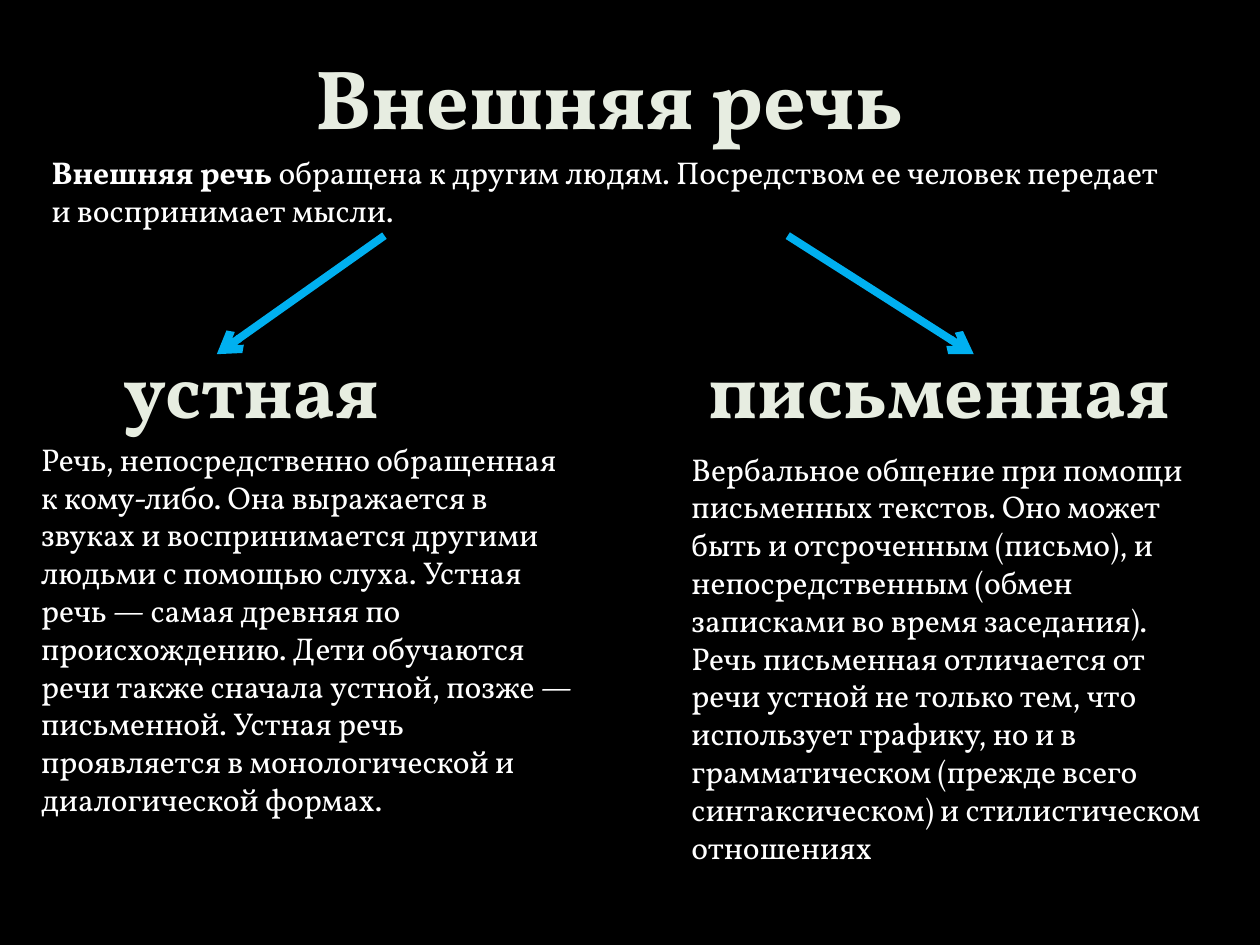
import pptx
import pptx.util
import pptx.dml.color
import pptx.enum.shapes
import pptx.enum.text
import pptx.oxml.ns
import lxml.etree

Cm = pptx.util.Cm
ALIGN = pptx.enum.text.PP_ALIGN

THEME = {
    "font": "Vollkorn",
    "background": "000000",
    "heading": "E7EDE1",
    "body": "FFFFFF",
    "arrow": "00B0F0",
    "title_size": 48,
    "heading_size": 44,
    "body_size": 18,
    "arrow_width": 4.5,
}

TITLE = ("Внешняя речь", (3.96, 0.79, 16.66, 2.31))
INTRO = (
    [
        ("Внешняя речь ", True),
        ("обращена к другим людям. Посредством ее человек передает "
         "и воспринимает мысли.", False),
    ],
    (0.79, 2.97, 23.22, 1.8),
)
HEADING_TOP, HEADING_HEIGHT = 6.76, 2.13
BODY_HEIGHT = 9.5
ARROW_TOP, ARROW_BOTTOM = 4.75, 7.14

BRANCHES = [
    {
        "heading": "устная",
        "heading_span": (-0.99, 12.12),
        "arrow_x": (7.75, 4.37),
        "body": "Речь, непосредственно обращенная к кому-либо. Она выражается "
                "в звуках и воспринимается другими людьми с помощью слуха. "
                "Устная речь — самая древняя по происхождению. Дети обучаются "
                "речи также сначала устной, позже — письменной. Устная речь "
                "проявляется в монологической и диалогической формах.",
        "body_place": (0.58, 8.74, 11.3),
    },
    {
        "heading": "письменная",
        "heading_span": (13.11, 11.66),
        "arrow_x": (15.88, 19.63),
        "body": "Вербальное общение при помощи письменных текстов. Оно может "
                "быть и отсроченным (письмо), и непосредственным (обмен "
                "записками во время заседания). Речь письменная отличается от "
                "речи устной не только тем, что использует графику, но и в "
                "грамматическом (прежде всего синтаксическом) и "
                "стилистическом отношениях",
        "body_place": (13.69, 8.94, 11.13),
    },
]


def rgb(name):
    return pptx.dml.color.RGBColor.from_string(THEME[name])


def apply(obj, values):
    for name, value in values.items():
        setattr(obj, name, value)


def write(sp, box, runs, size, color, align=ALIGN.LEFT):
    apply(sp, dict(zip(("left", "top", "width", "height"), map(Cm, box))))
    tf = sp.text_frame
    apply(tf, {
        "word_wrap": True,
        "auto_size": pptx.enum.text.MSO_AUTO_SIZE.SHAPE_TO_FIT_TEXT,
        "vertical_anchor": pptx.enum.text.MSO_ANCHOR.TOP,
    })
    p = tf.paragraphs[0]
    p.alignment = align
    for text, bold in runs:
        r = p.add_run()
        r.text = text
        apply(r.font, {
            "name": THEME["font"],
            "size": pptx.util.Pt(THEME[size]),
            "bold": bold,
        })
        r.font.color.rgb = rgb(color)


def add_text(slide, box, *args):
    write(slide.shapes.add_textbox(0, 0, 0, 0), box, *args)


def add_arrow(slide, x1, x2):
    line = slide.shapes.add_connector(
        pptx.enum.shapes.MSO_CONNECTOR.STRAIGHT,
        Cm(x1), Cm(ARROW_TOP), Cm(x2), Cm(ARROW_BOTTOM))
    line.line.color.rgb = rgb("arrow")
    line.line.width = pptx.util.Pt(THEME["arrow_width"])
    qn = pptx.oxml.ns.qn
    lxml.etree.SubElement(line.line._get_or_add_ln(), qn("a:tailEnd"), type="arrow")
    lxml.etree.SubElement(line._element.spPr, qn("a:effectLst"))


def main():
    prs = pptx.Presentation()
    apply(prs, {"slide_width": Cm(25.4), "slide_height": Cm(19.05)})
    slide = prs.slides.add_slide(prs.slide_layouts.get_by_name("Title Only"))
    fill = slide.background.fill
    fill.solid()
    fill.fore_color.rgb = rgb("background")

    title, title_box = TITLE
    write(slide.shapes.title, title_box, [(title, True)],
          "title_size", "heading", ALIGN.CENTER)
    runs, intro_box = INTRO
    add_text(slide, intro_box, runs, "body_size", "body")

    for branch in BRANCHES:
        add_arrow(slide, *branch["arrow_x"])
        left, width = branch["heading_span"]
        add_text(slide, (left, HEADING_TOP, width, HEADING_HEIGHT),
                 [(branch["heading"], True)],
                 "heading_size", "heading", ALIGN.CENTER)
        add_text(slide, (*branch["body_place"], BODY_HEIGHT),
                 [(branch["body"], False)], "body_size", "body")

    prs.save("out.pptx")


if __name__ == "__main__":
    main()
